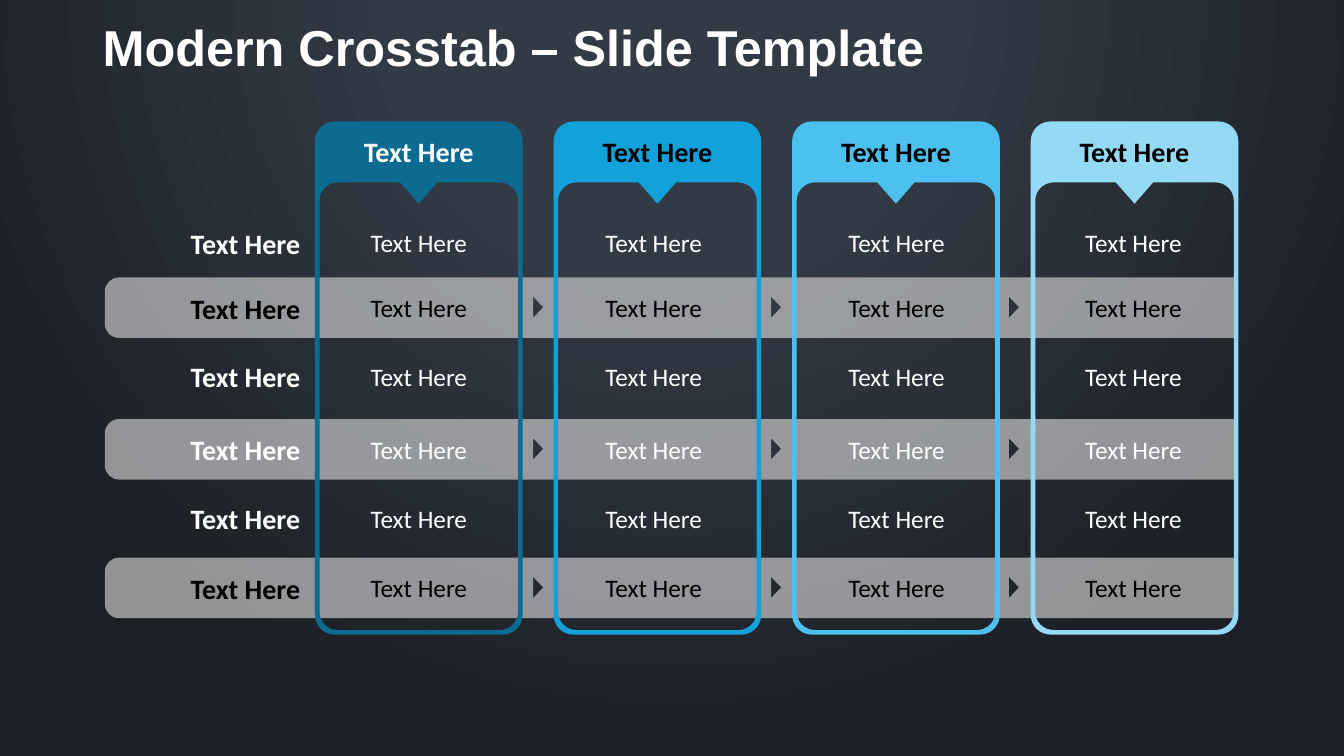
from dataclasses import dataclass

from pptx import Presentation
from pptx.dml.color import RGBColor as Rgb
from pptx.enum.text import MSO_ANCHOR as Anchor, MSO_AUTO_SIZE as Fit, PP_ALIGN as Align
from pptx.oxml import parse_xml
from pptx.oxml.ns import nsdecls, qn
from pptx.shapes.autoshape import Shape
from pptx.slide import Slide
from pptx.text.text import TextFrame
from pptx.util import Emu, Inches, Pt

WHITE = Rgb(0xFF, 0xFF, 0xFF)
BLACK = Rgb(0, 0, 0)
GREY = Rgb(0xD3, 0xD3, 0xD3)
SLATE = Rgb(0x32, 0x3A, 0x45)
NIGHT = Rgb(0x1C, 0x20, 0x26)
TEAL = Rgb(0x0D, 0x6B, 0x91)
BLUE = Rgb(0x13, 0xA1, 0xD9)
SKY = Rgb(0x4C, 0xC1, 0xEF)
PALE = Rgb(0x94, 0xDA, 0xF5)

# The grid: 75 rows fill the slide's height, and its cells are square
HIGH = Inches(7.5)
WIDE = Emu(HIGH * 16 // 9)
UNIT = HIGH / 75
LEFT, PITCH = 31.25, 23.67
WORD = "Text Here"

# A step is one point for a line, or three for a curve
Point = tuple[float, float]
Step = tuple[Point, ...]
Path = list[Step]


@dataclass(frozen=True)
class Column:
    fill: Rgb
    ink: Rgb
    inset: float  # from the panel's edge to its cells


@dataclass(frozen=True)
class Row:
    top: float
    ink: Rgb
    band: bool


@dataclass(frozen=True)
class Style:
    size: int
    ink: Rgb
    bold: bool = True
    align: Align = Align.CENTER
    font: str = "Calibri"


COLS = [
    Column(TEAL, WHITE, 2),
    Column(BLUE, BLACK, 1.63),
    Column(SKY, BLACK, 2.06),
    Column(PALE, BLACK, 1.89),
]
ROWS = [
    Row(22.05, WHITE, False),
    Row(28.5, BLACK, True),
    Row(35.3, WHITE, False),
    Row(42.55, WHITE, True),
    Row(49.4, WHITE, False),
    Row(56.3, BLACK, True),
]


def emu(cells: float) -> Emu:
    return Emu(round(cells * UNIT))


def edge(col: int) -> float:
    return LEFT + col * PITCH


def turn(start: Point, corner: Point, end: Point) -> Path:
    """Line to `start`, then a quarter round towards `end`."""
    if start == end:
        return [(corner,)]
    first, last = (
        (p[0] + 0.55 * (corner[0] - p[0]), p[1] + 0.55 * (corner[1] - p[1]))
        for p in (start, end)
    )
    return [(start,), (first, last, end)]


def box(x: float, y: float, w: float, h: float, lead: float, tail: float) -> Path:
    """Rectangle with corner radius `lead` at the left and `tail` at the right."""
    right, low = x + w, y + h
    return (
        turn((right - tail, y), (right, y), (right, y + tail))
        + turn((right, low - tail), (right, low), (right - tail, low))
        + turn((x + lead, low), (x, low), (x, low - lead))
        + turn((x, y + lead), (x, y), (x + lead, y))
    )


def draw(slide: Slide, paths: list[Path], fill: Rgb) -> Shape:
    pen = None
    for path in paths:
        spots = [(emu(x), emu(y)) for step in path for x, y in step]
        if pen is None:
            pen = slide.shapes.build_freeform(*spots[0])
        else:
            pen.move_to(*spots[0])
        pen.add_line_segments(spots[1:], close=True)
    shape = pen.convert_to_shape()
    bend(shape, paths)
    shape.shadow.inherit = False
    shape.fill.solid()
    shape.fill.fore_color.rgb = fill
    shape.line.fill.background()
    return shape


def bend(shape: Shape, paths: list[Path]) -> None:
    """Join the three lines of each curved step into one curve."""
    lines = iter(list(shape.element.iter(qn("a:lnTo"))))
    for path in paths:
        for step in path[1:]:
            parts = [next(lines) for _ in step]
            if len(parts) == 3:
                curve = parse_xml(f'<a:cubicBezTo {nsdecls("a")}/>')
                parts[0].addprevious(curve)
                for part in parts:
                    curve.append(part[0])
                    part.getparent().remove(part)


def write(frame: TextFrame, text: str, style: Style, pads: tuple[float, ...]) -> None:
    frame.word_wrap = True
    frame.margin_left, frame.margin_top, frame.margin_right, frame.margin_bottom = map(emu, pads)
    para = frame.paragraphs[0]
    para.alignment = style.align
    run = para.add_run()
    run.text = text
    run.font.name, run.font.size, run.font.bold = style.font, Pt(style.size), style.bold
    run.font.color.rgb = style.ink


def cell(slide: Slide, x: float, y: float, h: float, style: Style) -> None:
    frame = slide.shapes.add_textbox(emu(x), emu(y), emu(16.6), emu(h)).text_frame
    write(frame, WORD, style, (0, 0.5, 0, 0.5))
    frame.vertical_anchor = Anchor.BOTTOM
    frame.auto_size = Fit.SHAPE_TO_FIT_TEXT


def band(slide: Slide, row: Row) -> None:
    y = row.top - 0.97
    paths = [box(10.4, y, 112.3, 6, 1.4, 0)]
    for i in range(len(COLS) - 1):
        x = 52.9 + 23.6 * i
        paths.append([((x, y + 1.9),), ((x + 1, y + 2.95),), ((x, y + 4),)])
    shape = draw(slide, paths, GREY)
    tint = shape.element.spPr.find(".//" + qn("a:srgbClr"))
    tint.append(parse_xml(f'<a:alpha {nsdecls("a")} val="65000"/>'))


def panel(slide: Slide, x: float, col: Column) -> None:
    mid, lip = x + 10.3, 18.1
    notch = [((mid - 1.85, lip),), ((mid, lip + 2.1),), ((mid + 1.85, lip),)]
    inner = box(x + 0.45, lip, 19.7, 44.4, 1.8, 1.8) + notch
    shape = draw(slide, [inner, box(x, 12.05, 20.6, 50.9, 1.95, 1.95)], col.fill)
    write(shape.text_frame, WORD, Style(20, col.ink), (0.4, 1.3, 0.4, 0.4))
    shape.text_frame.vertical_anchor = Anchor.TOP


def backdrop(slide: Slide) -> None:
    slide.background.fill.solid()
    props = slide.element.find(".//" + qn("p:bgPr"))
    stops = "".join(
        f'<a:gs pos="{at * 1000}"><a:srgbClr val="{tone}"/></a:gs>'
        for at, tone in [(0, SLATE), (35, SLATE), (100, NIGHT)]
    )
    props.replace(props[0], parse_xml(
        f'<a:gradFill {nsdecls("a")} rotWithShape="1"><a:gsLst>{stops}</a:gsLst>'
        '<a:path path="circle"><a:fillToRect l="50000" t="-80000" r="50000" b="180000"/>'
        "</a:path></a:gradFill>"
    ))


def main() -> None:
    deck = Presentation()
    deck.slide_width, deck.slide_height = WIDE, HIGH
    slide = deck.slides.add_slide(deck.slide_layouts[6])
    backdrop(slide)
    # Bands behind every second row
    for row in ROWS:
        if row.band:
            band(slide, row)
    # Row labels and cells
    for row in ROWS:
        cell(slide, 13.2, row.top - 0.2, 4.4, Style(20, row.ink, align=Align.RIGHT))
        for i, col in enumerate(COLS):
            cell(slide, edge(i) + col.inset, row.top, 4, Style(18, row.ink, bold=False))
    # Column panels with their headers
    for i, col in enumerate(COLS):
        panel(slide, edge(i), col)
    # Title
    frame = slide.shapes.add_textbox(emu(9.2), emu(1.8), emu(115), emu(8.1)).text_frame
    style = Style(36, WHITE, align=Align.LEFT, font="Arial")
    write(frame, "Modern Crosstab – Slide Template", style, (1, 0.5, 0, 0.5))
    frame.paragraphs[0].line_spacing = 0.9
    deck.save("out.pptx")


if __name__ == "__main__":
    main()
